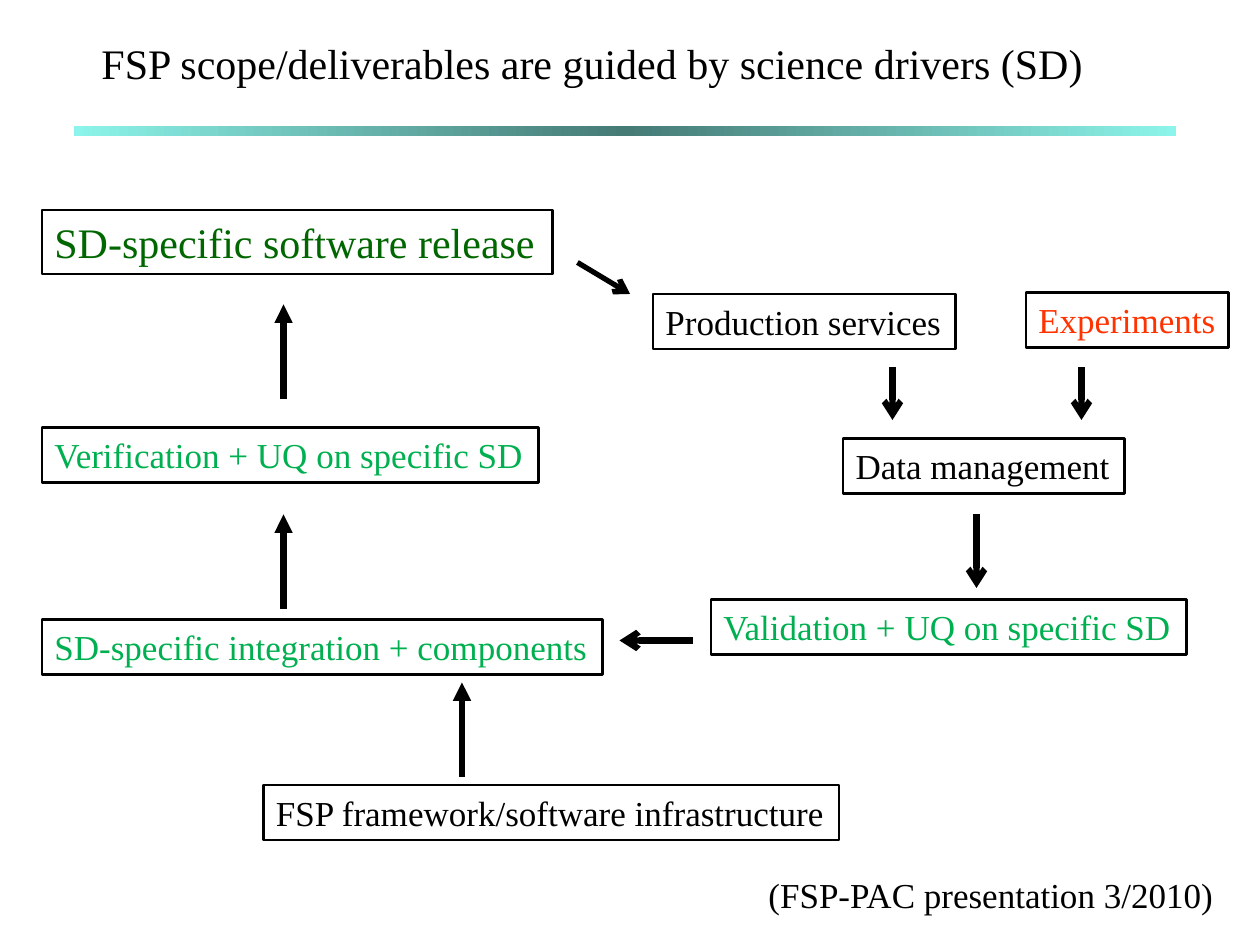
from lxml import etree
from pptx import Presentation
from pptx.dml.color import RGBColor
from pptx.enum.shapes import MSO_CONNECTOR, MSO_SHAPE
from pptx.enum.text import MSO_ANCHOR, PP_ALIGN
from pptx.oxml.ns import qn
from pptx.util import Inches, Pt

RECT, STRAIGHT = MSO_SHAPE.RECTANGLE, MSO_CONNECTOR.STRAIGHT
LEFT, TOP = PP_ALIGN.LEFT, MSO_ANCHOR.TOP
FONT = "Times New Roman"
COLORS = {"black": "000000", "green": "00B050", "dark_green": "006600",
          "red": "FF3300", "aqua": "8CF4EA", "teal": "467A75"}
CELL = Inches(1) / 12  # the slide is a grid of 120 columns by 90 rows


def grid(*cells):
    return [round(c * CELL) for c in cells]


def rgb(name):
    return RGBColor.from_string(COLORS[name])


def set_text(sp, text, size, color="black", wrap=False):
    tf = sp.text_frame
    tf.text = text
    tf.word_wrap = wrap
    tf.vertical_anchor = TOP
    p = tf.paragraphs[0]
    p.alignment = LEFT
    font = p.runs[0].font
    font.name, font.size, font.color.rgb = FONT, Pt(size), rgb(color)


def add_title(s, box):
    sp = s.shapes.title
    sp.left, sp.top, sp.width, sp.height = grid(*box)
    set_text(sp, "FSP scope/deliverables are guided by science drivers (SD)", 24, wrap=True)
    sp.text_frame.margin_left = Inches(0.18)


def add_rule(s, box):
    sp = s.shapes.add_shape(RECT, *grid(*box))
    sp.shadow.inherit = False
    sp.line.fill.background()
    sp.fill.gradient()
    sp.fill.gradient_angle = 0
    # Three stops: light ends, dark middle
    stops = sp._element.spPr.find(qn("a:gradFill")).find(qn("a:gsLst"))
    for stop in list(stops):
        stops.remove(stop)
    for pos, color in ((0, "aqua"), (50, "teal"), (100, "aqua")):
        stop = etree.SubElement(stops, qn("a:gs"), pos=str(pos * 1000))
        etree.SubElement(stop, qn("a:srgbClr"), val=COLORS[color])


def add_step(s, box, text, color="black", size=20):
    sp = s.shapes.add_shape(RECT, *grid(*box))
    sp.shadow.inherit = False
    sp.fill.background()
    sp.line.color.rgb = rgb("black")
    sp.line.width = Pt(1.5)
    set_text(sp, text, size, color)


def add_arrow(s, start, end, head, width=3.5):
    c = s.shapes.add_connector(STRAIGHT, *grid(*start, *end))
    c.line.color.rgb = rgb("black")
    c.line.width = Pt(width)
    etree.SubElement(c.line._get_or_add_ln(), qn("a:tailEnd"), type=head)
    etree.SubElement(c._element.spPr, qn("a:effectLst"))


def add_software_flow(s, x, y):
    """Left column, built from the bottom up."""
    h = 5.25
    add_step(s, (x + 21.1, y + 54.75, 54.8, h), "FSP framework/software infrastructure")
    add_step(s, (x, y + 39, 53.4, h), "SD-specific integration + components", "green")
    add_step(s, (x, y + 20.7, 47.3, h), "Verification + UQ on specific SD", "green")
    add_step(s, (x, y, 48.6, 6.1), "SD-specific software release", "dark_green", 24)
    for dx, dy in ((23, 18), (23, 38), (40, 54)):
        add_arrow(s, (x + dx, y + dy), (x + dx, y + dy - 9), "triangle")


def add_data_flow(s, x, y):
    """Right column, from production and experiments to validation."""
    h = 5.25
    add_step(s, (x, y, 28.8, h), "Production services")
    add_step(s, (x + 35.5, y - 0.15, 19.3, h), "Experiments", "red")
    add_step(s, (x + 18.1, y + 13.75, 26.8, h), "Data management")
    add_step(s, (x + 5.5, y + 29.1, 45.3, h), "Validation + UQ on specific SD", "green")
    for dx, dy, length in ((22.8, 7, 5), (40.8, 7, 5), (30.8, 21, 7)):
        add_arrow(s, (x + dx, y + dy), (x + dx, y + dy + length), "arrow")


def add_source_note(s, box):
    sp = s.shapes.add_textbox(*grid(*box))
    set_text(sp, "(FSP-PAC presentation 3/2010)", 20, wrap=True)


def main():
    prs = Presentation()
    prs.slide_width, prs.slide_height = Inches(10), Inches(7.5)
    s = prs.slides.add_slide(prs.slide_layouts[5])

    # Heading
    add_title(s, (7.5, 3, 99.5, 6.1))
    add_rule(s, (7, 12, 105, 1))

    # Cycle of work
    add_software_flow(s, 4, 20)
    add_data_flow(s, 62.2, 28)

    # Links between the two columns
    add_arrow(s, (55, 25), (60, 28), "arrow", 3)
    add_arrow(s, (66, 61), (59, 61), "arrow")

    add_source_note(s, (72, 82.6, 46, 5.3))
    prs.save("out.pptx")


if __name__ == "__main__":
    main()
